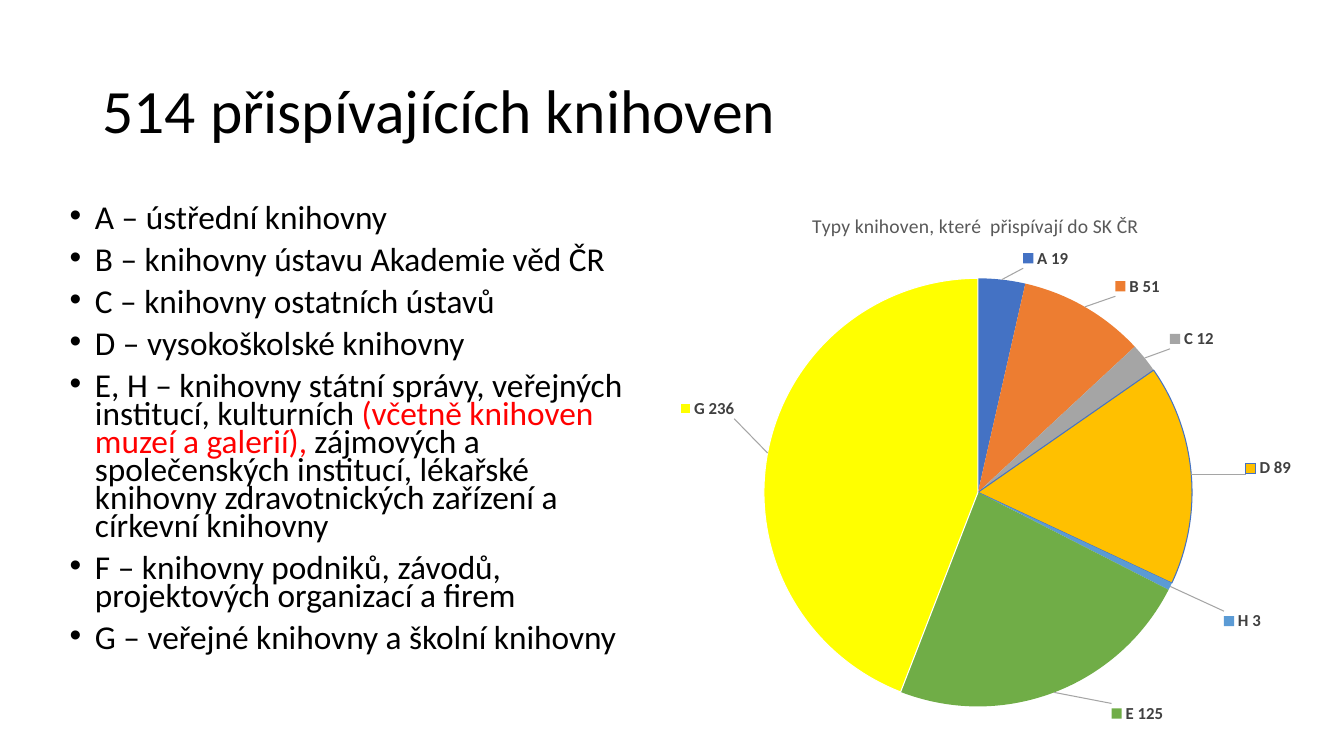
from lxml import etree
from pptx import Presentation
from pptx.chart.data import CategoryChartData
from pptx.dml.color import RGBColor
from pptx.enum.chart import XL_CHART_TYPE, XL_LABEL_POSITION
from pptx.enum.text import MSO_ANCHOR, MSO_AUTO_SIZE, PP_ALIGN
from pptx.oxml import parse_xml
from pptx.oxml.ns import nsdecls, qn
from pptx.util import Cm, Pt

PIE = XL_CHART_TYPE.PIE
OUTSIDE_END = XL_LABEL_POSITION.OUTSIDE_END
MIDDLE, TOP = MSO_ANCHOR.MIDDLE, MSO_ANCHOR.TOP
LEFT = PP_ALIGN.LEFT
NO_AUTOFIT = MSO_AUTO_SIZE.NONE

FONT = "Calibri"
BLACK = RGBColor(0x00, 0x00, 0x00)
RED = RGBColor(0xFF, 0x00, 0x00)
WHITE = RGBColor(0xFF, 0xFF, 0xFF)
BLUE = RGBColor(0x44, 0x72, 0xC4)
ORANGE = RGBColor(0xED, 0x7D, 0x31)
GRAY = RGBColor(0xA5, 0xA5, 0xA5)
GOLD = RGBColor(0xFF, 0xC0, 0x00)
LIGHT_BLUE = RGBColor(0x5B, 0x9B, 0xD5)
GREEN = RGBColor(0x70, 0xAD, 0x47)
YELLOW = RGBColor(0xFF, 0xFF, 0x00)
LABEL_GRAY = RGBColor(0x40, 0x40, 0x40)
TITLE_GRAY = RGBColor(0x59, 0x59, 0x59)

HEADING = "514 přispívajících knihoven"
# Each bullet is a list of (text, colour) pieces
LIBRARY_TYPES = [
    [("A – ústřední knihovny", BLACK)],
    [("B – knihovny ústavu Akademie věd ČR", BLACK)],
    [("C – knihovny ostatních ústavů", BLACK)],
    [("D – vysokoškolské knihovny", BLACK)],
    [("E, H – knihovny státní správy, veřejných institucí, kulturních ", BLACK),
     ("(včetně knihoven muzeí a galerií),", RED),
     (" zájmových a společenských institucí, lékařské knihovny "
      "zdravotnických zařízení a církevní knihovny", BLACK)],
    [("F – knihovny podniků, závodů, projektových organizací a firem", BLACK)],
    [("G – veřejné knihovny a školní knihovny", BLACK)],
]
CHART_TITLE = "Typy knihoven, které  přispívají do SK ČR"
# Type, count, fill, outline, label shift as a share of the chart's size
SLICES = [
    ("A", 19, BLUE, None, (0.03, -0.01)),
    ("B", 51, ORANGE, None, (0.04, -0.01)),
    ("C", 12, GRAY, None, (0.03, -0.01)),
    ("D", 89, GOLD, BLUE, (0.07, -0.01)),
    ("H", 3, LIGHT_BLUE, None, (0.07, 0.04)),
    ("E", 125, GREEN, None, (0.08, 0.01)),
    ("G", 236, YELLOW, WHITE, (-0.04, -0.06)),
]

HEADING_BOX = (Cm(2.33), Cm(1.02), Cm(29.21), Cm(3.68))
LIST_BOX = (Cm(1.5), Cm(5.08), Cm(15.21), Cm(12.09))
CHART_BOX = (Cm(15.85), Cm(4.7), Cm(17.42), Cm(13.94))
BULLET_INDENT = Cm(0.64)


def format_font(font, size, color, bold=False):
    font.name, font.size, font.bold = FONT, Pt(size), bold
    font.color.rgb = color


def add_text(paragraph, text, *, size, color=BLACK, bold=False):
    run = paragraph.add_run()
    run.text = text
    format_font(run.font, size, color, bold)


def place(placeholder, box, anchor):
    placeholder.left, placeholder.top, placeholder.width, placeholder.height = box
    frame = placeholder.text_frame
    frame.word_wrap, frame.auto_size = True, NO_AUTOFIT
    frame.vertical_anchor = anchor
    return frame


def manual_layout(x, y, size=None, *, edge=False):
    """Return a c:layout element; edge measures x and y from the chart's corner."""
    values = []
    if size:
        values.append(("layoutTarget", "inner"))
    if edge:
        values += [("xMode", "edge"), ("yMode", "edge")]
    values += [("x", x), ("y", y)]
    if size:
        values += zip("wh", size)
    body = "".join(f'<c:{tag} val="{value}"/>' for tag, value in values)
    return parse_xml(f'<c:layout {nsdecls("c")}><c:manualLayout>{body}'
                     '</c:manualLayout></c:layout>')


def show_key_category_value(labels):
    """Set the shown parts of a c:dLbls or c:dLbl element."""
    for part in ("showLegendKey", "showVal", "showCatName"):
        labels.find(qn("c:" + part)).set("val", "1")
    separator = etree.Element(qn("c:separator"))
    separator.text = " "
    labels.find(qn("c:showBubbleSize")).addnext(separator)


def add_library_pie(slide):
    data = CategoryChartData()
    data.categories = [row[0] for row in SLICES]
    data.add_series("Series 1", [row[1] for row in SLICES])
    chart = slide.shapes.add_chart(PIE, *CHART_BOX, data).chart
    format_font(chart.font, 10, BLACK)
    chart.has_legend = False
    chart.has_title = True
    add_text(chart.chart_title.text_frame.paragraphs[0], CHART_TITLE,
             size=14, color=TITLE_GRAY)
    title = chart.chart_title._element
    for old in title.findall(qn("c:layout")):
        title.remove(old)
    title.find(qn("c:tx")).addnext(manual_layout(0.26, 0.04, edge=True))

    plot_area = chart._chartSpace.chart.plotArea
    for old in plot_area.findall(qn("c:layout")):
        plot_area.remove(old)
    plot_area.insert(0, manual_layout(0.195, 0.166, (0.62, 0.774), edge=True))

    plot = chart.plots[0]
    plot.vary_by_categories = True
    series = plot.series[0]
    labels = series.data_labels
    format_font(labels.font, 12, LABEL_GRAY, True)
    labels.position = OUTSIDE_END
    for index, (_, _, fill, outline, _) in enumerate(SLICES):
        point = series.points[index]
        point.format.fill.solid()
        point.format.fill.fore_color.rgb = fill
        if outline is None:
            point.format.line.fill.background()
        else:
            point.format.line.color.rgb = outline
            point.format.line.width = Pt(0.75)
        format_font(point.data_label.font, 12, LABEL_GRAY, True)
        point.data_label.position = OUTSIDE_END

    all_labels = series._element.find(qn("c:dLbls"))
    show_key_category_value(all_labels)
    for label, row in zip(all_labels.findall(qn("c:dLbl")), SLICES):
        show_key_category_value(label)
        label.insert(1, manual_layout(*row[4]))
    for old in all_labels.findall(qn("c:showLeaderLines")):
        all_labels.remove(old)
    etree.SubElement(all_labels, qn("c:showLeaderLines")).set("val", "1")
    all_labels.append(parse_xml(
        f'<c:leaderLines {nsdecls("c", "a")}><c:spPr><a:ln w="9525"><a:solidFill>'
        f'<a:srgbClr val="{GRAY}"/></a:solidFill></a:ln></c:spPr></c:leaderLines>'))


def main():
    prs = Presentation()
    prs.slide_width, prs.slide_height = Cm(33.87), Cm(19.05)
    slide = prs.slides.add_slide(prs.slide_layouts[1])
    heading, library_list = slide.placeholders

    line = place(heading, HEADING_BOX, MIDDLE).paragraphs[0]
    line.alignment, line.line_spacing = LEFT, 0.9
    add_text(line, HEADING, size=44)

    frame = place(library_list, LIST_BOX, TOP)
    for index, pieces in enumerate(LIBRARY_TYPES):
        bullet = frame.add_paragraph() if index else frame.paragraphs[0]
        bullet.line_spacing, bullet.space_before = 0.7, Pt(10)
        properties = bullet._p.get_or_add_pPr()
        properties.set("marL", str(BULLET_INDENT))
        properties.set("indent", str(-BULLET_INDENT))
        for text, color in pieces:
            add_text(bullet, text, size=23.8, color=color)

    add_library_pie(slide)
    prs.save("out.pptx")


if __name__ == "__main__":
    main()
